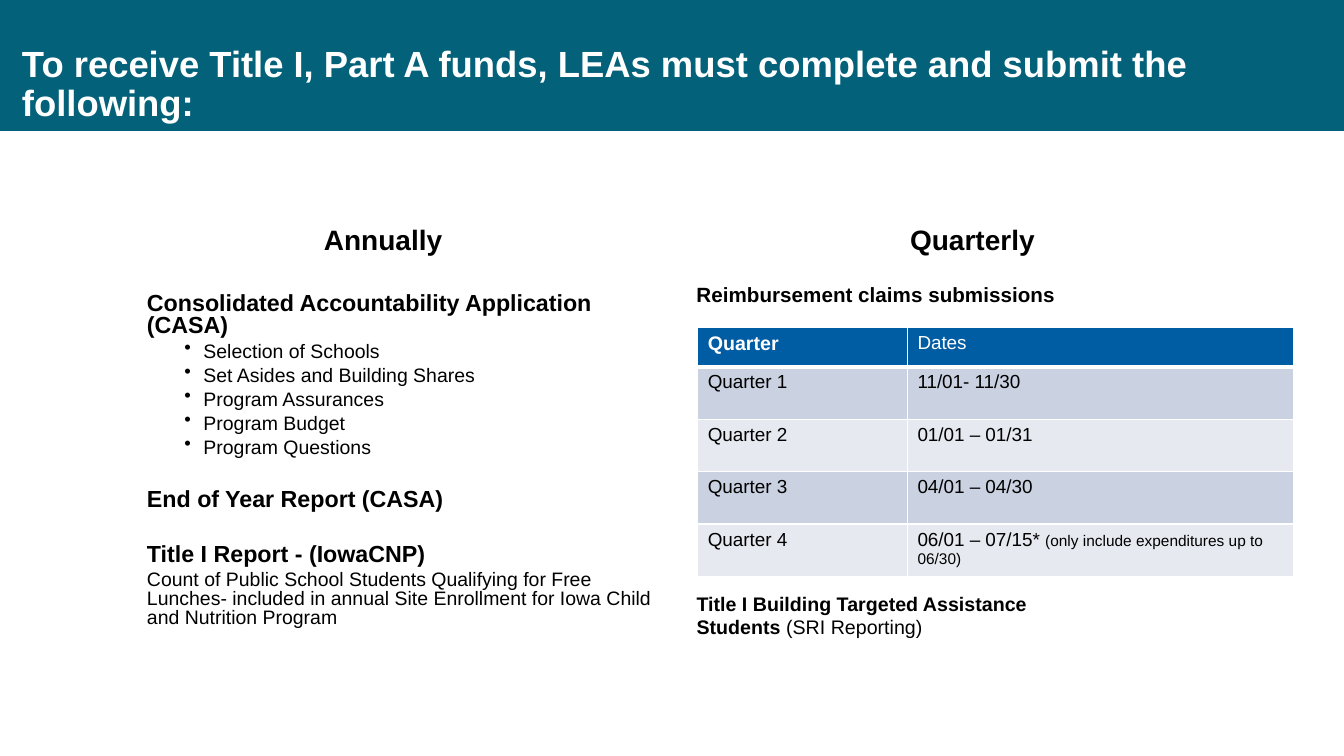
from dataclasses import dataclass

from lxml import etree
from pptx import Presentation
from pptx.dml.color import RGBColor
from pptx.enum.shapes import MSO_SHAPE
from pptx.enum.text import MSO_ANCHOR, PP_ALIGN
from pptx.oxml.ns import qn
from pptx.util import Inches, Pt

RECTANGLE = MSO_SHAPE.RECTANGLE
TOP, MIDDLE, BOTTOM = MSO_ANCHOR.TOP, MSO_ANCHOR.MIDDLE, MSO_ANCHOR.BOTTOM
LEFT, CENTER = PP_ALIGN.LEFT, PP_ALIGN.CENTER


@dataclass(frozen=True)
class Theme:
    font: str = "Arial"
    teal: str = "03617A"
    blue: str = "005CA3"
    band_dark: str = "CAD1E0"
    band_light: str = "E6E9F0"
    white: str = "FFFFFF"
    black: str = "000000"
    title: float = 26
    heading: float = 20
    topic: float = 16.6
    claims: float = 14.7
    header: float = 14
    detail: float = 13.9
    cell: float = 13.5
    remark: float = 11


theme = Theme()


def write(frame, text, size, color=theme.black, bold=False, align=LEFT,
          spacing=1.0, before=0, indent=0, bullet=None, tail="",
          tail_size=None):
    para = frame.paragraphs[0]
    if para.runs:
        para = frame.add_paragraph()
    para.alignment = align
    para.line_spacing = spacing
    para.space_before = Pt(before)
    properties = para._p.get_or_add_pPr()
    properties.set("marL", str(Inches(indent)))
    properties.set("indent", str(Inches(-0.19 if bullet else 0)))
    if bullet:
        para.level = 1
        etree.SubElement(properties, qn("a:buChar")).set("char", bullet)
    for words, points, weight in ((text, size, bold),
                                  (tail, tail_size or size, False)):
        if words:
            span = para.add_run()
            span.text = words
            span.font.name = theme.font
            span.font.size = Pt(points)
            span.font.bold = weight
            span.font.color.rgb = RGBColor.from_string(color)


def add_frame(left, top, width, height, anchor=TOP, inset_top=0.05):
    box = page.shapes.add_textbox(Inches(left), Inches(top),
                                  Inches(width), Inches(height))
    frame = box.text_frame
    frame.word_wrap = True
    frame.vertical_anchor = anchor
    frame.margin_top = Inches(inset_top)
    return frame


deck = Presentation()
deck.slide_width = Inches(13.33)
deck.slide_height = Inches(7.5)
page = deck.slides.add_slide(deck.slide_layouts[6])

banner = page.shapes.add_shape(RECTANGLE, 0, 0, Inches(13.33), Inches(1.3))
banner.shadow.inherit = False
banner.fill.solid()
banner.fill.fore_color.rgb = RGBColor.from_string(theme.teal)
banner.line.fill.background()

write(add_frame(0.12, 0, 12.36, 1.69, MIDDLE),
      "To receive Title I, Part A funds, LEAs must complete and submit the following:",
      theme.title, color=theme.white, bold=True, spacing=0.9)

for heading, left, width in (("Annually", 0.98, 5.64),
                             ("Quarterly", 6.81, 5.67)):
    write(add_frame(left, 1.69, width, 0.9, BOTTOM), heading, theme.heading,
          bold=True, align=CENTER, spacing=0.9)

annual = add_frame(0.98, 2.59, 5.64, 4.03, inset_top=0.32)
topic = dict(size=theme.topic, bold=True, spacing=0.8, indent=0.38)
detail = dict(size=theme.detail, spacing=0.8, before=3.8)
write(annual, "Consolidated Accountability Application (CASA)", **topic)
for item in ("Selection of Schools", "Set Asides and Building Shares",
             "Program Assurances", "Program Budget", "Program Questions"):
    write(annual, item, indent=0.94, bullet="•", **detail)
for report in ("End of Year Report (CASA)", "Title I Report - (IowaCNP)"):
    write(annual, report, before=22.9, **topic)
write(annual,
      "Count of Public School Students Qualifying for Free Lunches- included in "
      "annual Site Enrollment for Iowa Child and Nutrition Program",
      indent=0.38, **detail)

write(add_frame(6.81, 2.59, 5.67, 0.63, inset_top=0.27),
      "Reimbursement claims submissions", theme.claims, bold=True, spacing=0.7)

quarters = (
    ("Quarter", "Dates", ""),
    ("Quarter 1", "11/01- 11/30", ""),
    ("Quarter 2", "01/01 – 01/31", ""),
    ("Quarter 3", "04/01 – 04/30", ""),
    ("Quarter 4", "06/01 – 07/15* ", "(only include expenditures up to 06/30)"),
)
table = page.shapes.add_table(len(quarters), 2, Inches(6.92), Inches(3.25),
                              Inches(5.91), Inches(2.47)).table
for column, width in zip(table.columns, (2.08, 3.83)):
    column.width = Inches(width)
for index, (quarter, dates, remark) in enumerate(quarters):
    is_header = index == 0
    table.rows[index].height = Inches(0.39 if is_header else 0.52)
    band = theme.band_dark if index % 2 else theme.band_light
    for position, text in enumerate((quarter, dates)):
        cell = table.cell(index, position)
        is_title = is_header and position == 0
        write(cell.text_frame, text, theme.header if is_title else theme.cell,
              color=theme.white if is_header else theme.black, bold=is_title,
              tail=remark if position else "", tail_size=theme.remark)
        for side in ("L", "R", "T", "B"):
            thick = (index, side) in ((0, "B"), (1, "T"))
            border = etree.SubElement(cell._tc.get_or_add_tcPr(), qn("a:ln" + side))
            border.set("w", str(Pt(3 if thick else 1)))
            paint = etree.SubElement(border, qn("a:solidFill"))
            etree.SubElement(paint, qn("a:srgbClr")).set("val", theme.white)
        cell.fill.solid()
        cell.fill.fore_color.rgb = RGBColor.from_string(
            theme.blue if is_header else band)

write(add_frame(6.81, 5.82, 4.31, 0.81),
      "Title I Building Targeted Assistance Students ", theme.header,
      bold=True, tail="(SRI Reporting)")

deck.save("out.pptx")
